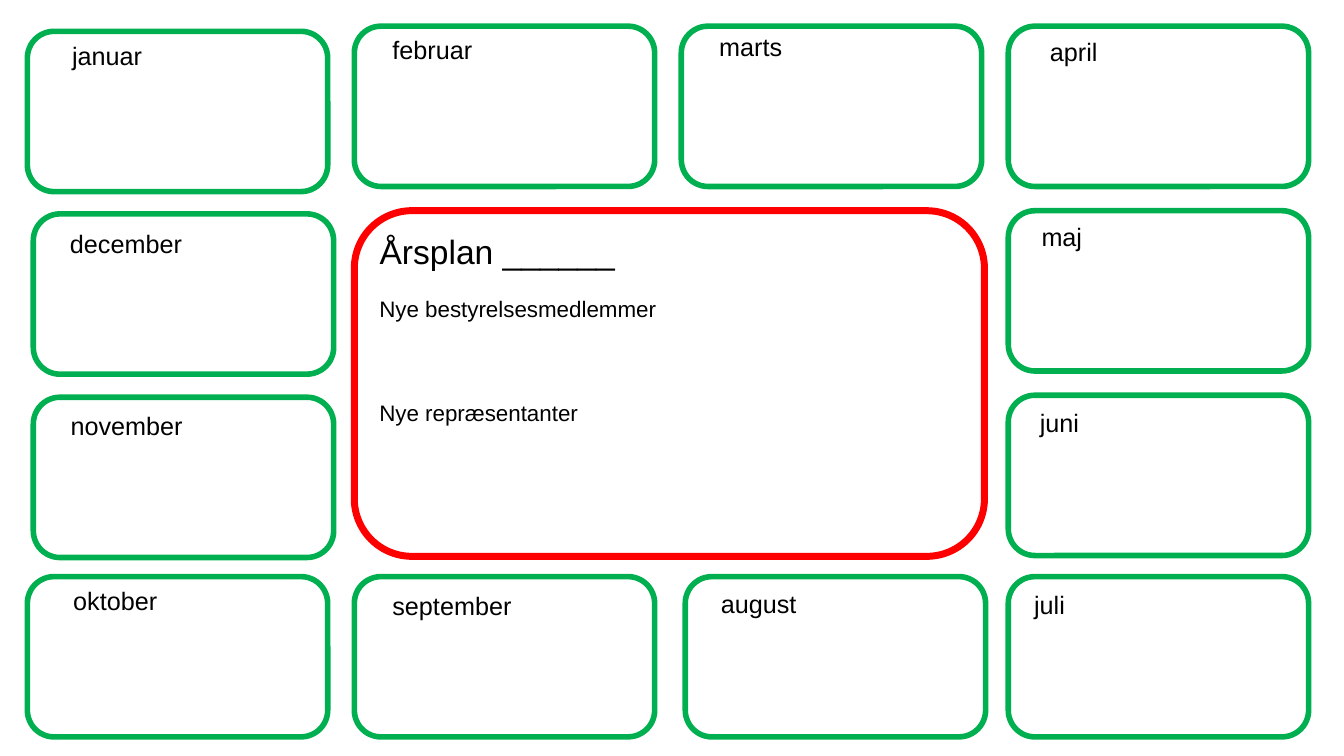
from dataclasses import dataclass

from pptx import Presentation
from pptx import util as u
from pptx.dml.color import RGBColor
from pptx.enum import shapes, text


@dataclass(frozen=True)
class Theme:
    font: str = "Arial"
    ink: RGBColor = RGBColor(0, 0, 0)
    month: RGBColor = RGBColor(0x00, 0xB0, 0x50)
    plan: RGBColor = RGBColor(0xFF, 0, 0)
    month_line: float = 4
    plan_line: float = 5
    title_size: int = 24
    label_size: int = 18
    body_size: int = 16


THEME = Theme()
LEFT, COL_STEP = 0.69, 8.24
ROW_TOPS = (0.66, 5.31, 9.96, 14.53)
CARD_W, CARD_H = 7.57, 4.04
LABEL_H = 1.02

# month, column, row, card shift (x, y), label offset (x, y), label width
MONTHS = (
    ("januar", 0, 0, (0, 0.13), (0.36, 0.1), 3.3),
    ("februar", 1, 0, (0, 0), (0.15, 0.08), 3.63),
    ("marts", 2, 0, (0, 0), (0.1, 0), 3.3),
    ("april", 3, 0, (0, 0), (0, 0.13), 3.3),
    ("maj", 3, 1, (0, 0), (-0.3, 0.13), 3.3),
    ("juni", 3, 2, (0, 0), (-0.36, 0.18), 3.3),
    ("juli", 3, 3, (0, 0), (-0.61, 0.2), 3.3),
    ("august", 2, 3, (0.1, 0), (0.2, 0.18), 3.3),
    ("september", 1, 3, (0, 0), (0.15, 0.23), 4.62),
    ("oktober", 0, 3, (0, 0), (0.36, 0.1), 3.71),
    ("november", 0, 2, (0.15, 0.05), (0.23, 0.2), 4.24),
    ("december", 0, 1, (0.15, 0.08), (0.2, 0.25), 4.27),
)


def set_attrs(target, values):
    for name, value in values.items():
        setattr(target, name, value)


def cm_box(*lengths):
    return [u.Cm(length) for length in lengths]


def add_frame(s, box, color, width):
    sp = s.shapes.add_shape(shapes.MSO_SHAPE.ROUNDED_RECTANGLE, *cm_box(*box))
    sp.shadow.inherit = False
    sp.fill.background()
    sp.line.color.rgb = color
    sp.line.width = u.Pt(width)


def write(sp, lines, size, align, gap=0):
    tf = sp.text_frame
    set_attrs(tf, {
        "word_wrap": True,
        "auto_size": text.MSO_AUTO_SIZE.NONE,
        "vertical_anchor": text.MSO_ANCHOR.TOP,
    })
    for i, line in enumerate(lines):
        p = tf.add_paragraph() if i else tf.paragraphs[0]
        set_attrs(p, {"alignment": align, "space_before": u.Pt(gap if i else 0)})
        r = p.add_run()
        r.text = line
        set_attrs(r.font, {"name": THEME.font, "size": u.Pt(size)})
        r.font.color.rgb = THEME.ink


def add_month(s, box, name, offset, label_w):
    add_frame(s, box, THEME.month, THEME.month_line)
    x, y = box[0] + offset[0], box[1] + offset[1]
    label = s.shapes.add_textbox(*cm_box(x, y, label_w, LABEL_H))
    write(label, [name], THEME.label_size, text.PP_ALIGN.CENTER)


def add_plan(s, box):
    add_frame(s, box, THEME.plan, THEME.plan_line)
    x, y = box[0] + 0.38, box[1] + 0.38

    # Heading
    title = s.shapes.title
    left, top, width, height = cm_box(x, y, 11.15, 1.25)
    set_attrs(title, {"left": left, "top": top, "width": width, "height": height})
    write(title, ["Årsplan ______"], THEME.title_size, text.PP_ALIGN.LEFT)

    # Headings for new members, with room to write between them
    body = s.shapes.add_textbox(*cm_box(x, y + 1.62, 11.15, 3.5))
    write(body, ["Nye bestyrelsesmedlemmer", "Nye repræsentanter"],
          THEME.body_size, text.PP_ALIGN.LEFT, gap=55)


def main():
    prs = Presentation()
    set_attrs(prs, {"slide_width": u.Cm(33.87), "slide_height": u.Cm(19.05)})
    s = prs.slides.add_slide(prs.slide_layouts[5])

    # Ring of months
    for name, col, row, shift, offset, label_w in MONTHS:
        x = LEFT + col * COL_STEP + shift[0]
        y = ROW_TOPS[row] + shift[1]
        add_month(s, (x, y, CARD_W, CARD_H), name, offset, label_w)

    # Annual plan in the middle
    add_plan(s, (LEFT + COL_STEP, ROW_TOPS[1], 15.88, 8.71))
    prs.save("out.pptx")


if __name__ == "__main__":
    main()
